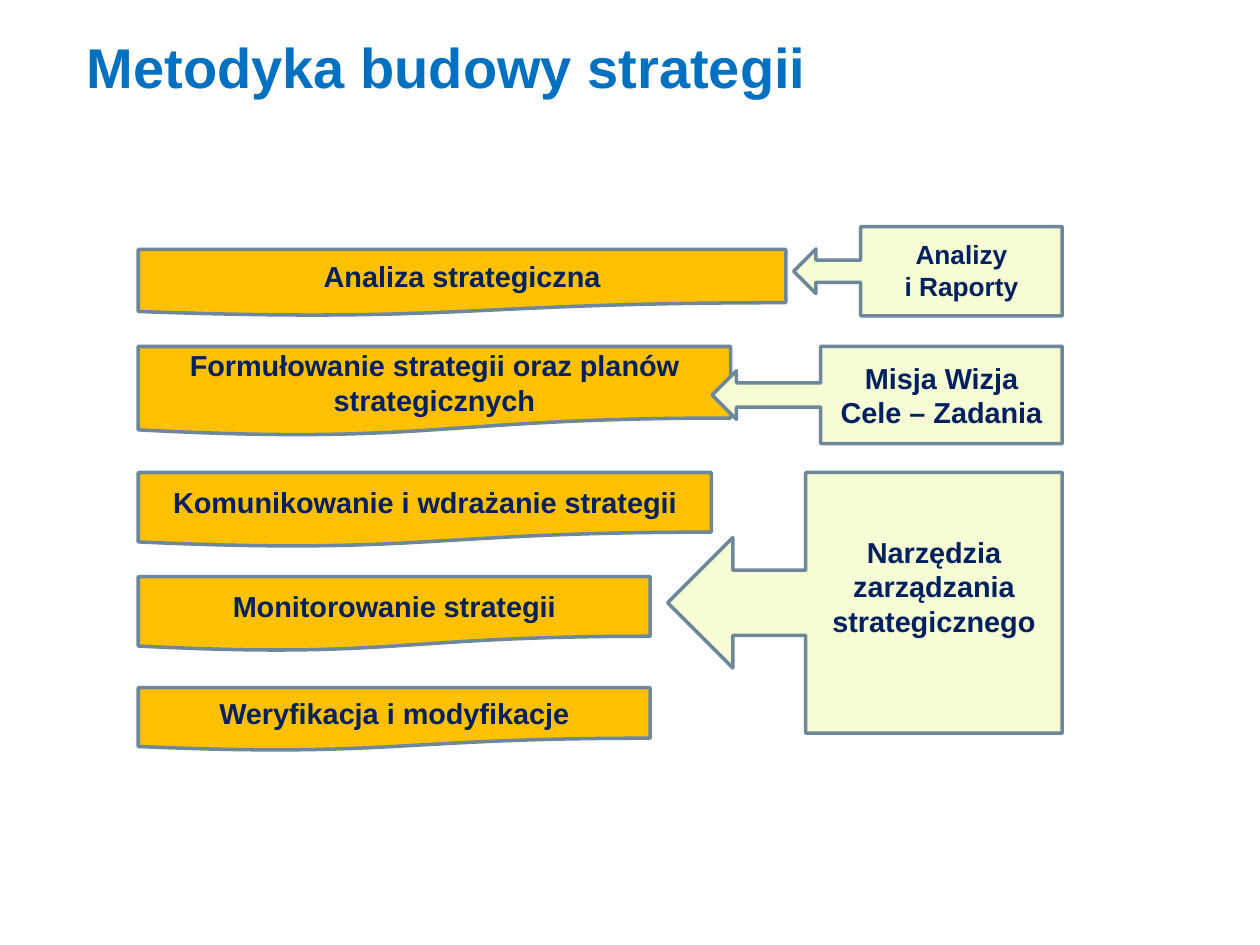
from pptx import Presentation, util as u
from pptx.dml.color import RGBColor
from pptx.enum import shapes, text

Pt = u.Pt

THEME = {
    "font": "Arial", "title": "0070C0", "ink": "002060", "line": "6D879B",
    "stage": "FFC000", "input": "F6FCD4",
    "title_size": 32, "size": 16.5, "small": 15, "line_width": 2,
}

# Content: stages as (text, top, width, height)
TITLE = "Metodyka budowy strategii"
STAGES = [
    ("Analiza strategiczna", 142.5, 370, 38),
    ("Formułowanie strategii oraz planów strategicznych", 198, 338.5, 51),
    ("Komunikowanie i wdrażanie strategii", 270, 327.5, 42.5),
    ("Monitorowanie strategii", 329.5, 292.5, 42.5),
    ("Weryfikacja i modyfikacje", 393, 292.5, 36),
]
# Inputs as (lines, top, width, height, body share, size, bottom inset)
INPUTS = [
    (["Analizy", "i Raporty"], 129.5, 153.5, 51, 0.75, THEME["small"], 5),
    (["Misja Wizja", "Cele – Zadania"], 198, 200, 55.5, 0.69, THEME["size"], 3.6),
    (["Narzędzia", "zarządzania", "strategicznego"],
     270, 225.5, 149, 0.65, THEME["size"], 22.5),
]
STAGE_LEFT, INPUT_RIGHT = 79, 607


def write(tf, lines, size, color, align):
    tf.word_wrap = True
    for i, line in enumerate(lines):
        p = tf.paragraphs[0] if i == 0 else tf.add_paragraph()
        p.alignment = align
        r = p.add_run()
        r.text = line
        r.font.name, r.font.size, r.font.bold = THEME["font"], Pt(size), True
        r.font.color.rgb = RGBColor.from_string(color)


def add_block(s, kind, box, fill, lines, size):
    sp = s.shapes.add_shape(kind, *map(Pt, box))
    sp.shadow.inherit = False
    sp.fill.solid()
    sp.fill.fore_color.rgb = RGBColor.from_string(fill)
    sp.line.color.rgb = RGBColor.from_string(THEME["line"])
    sp.line.width = Pt(THEME["line_width"])
    sp.text_frame.vertical_anchor = text.MSO_ANCHOR.MIDDLE
    write(sp.text_frame, lines, size, THEME["ink"], text.PP_ALIGN.CENTER)
    return sp


def main():
    prs = Presentation()
    prs.slide_width, prs.slide_height = Pt(720), Pt(540)
    s = prs.slides.add_slide(prs.slide_layouts[6])

    # Title
    sp = s.shapes.add_textbox(Pt(42.5), Pt(15), Pt(574.5), Pt(106.5))
    write(sp.text_frame, [TITLE], THEME["title_size"], THEME["title"],
          text.PP_ALIGN.LEFT)

    # Strategy stages, aligned left
    for label, top, width, height in STAGES:
        add_block(s, shapes.MSO_SHAPE.FLOWCHART_DOCUMENT,
                  (STAGE_LEFT, top, width, height),
                  THEME["stage"], [label], THEME["size"])

    # Inputs pointing at the stages, aligned right
    for lines, top, width, height, body, size, inset in INPUTS:
        sp = add_block(s, shapes.MSO_SHAPE.LEFT_ARROW_CALLOUT,
                       (INPUT_RIGHT - width, top, width, height),
                       THEME["input"], lines, size)
        sp.adjustments[3] = body
        sp.text_frame.margin_bottom = Pt(inset)

    prs.save("out.pptx")


if __name__ == "__main__":
    main()
